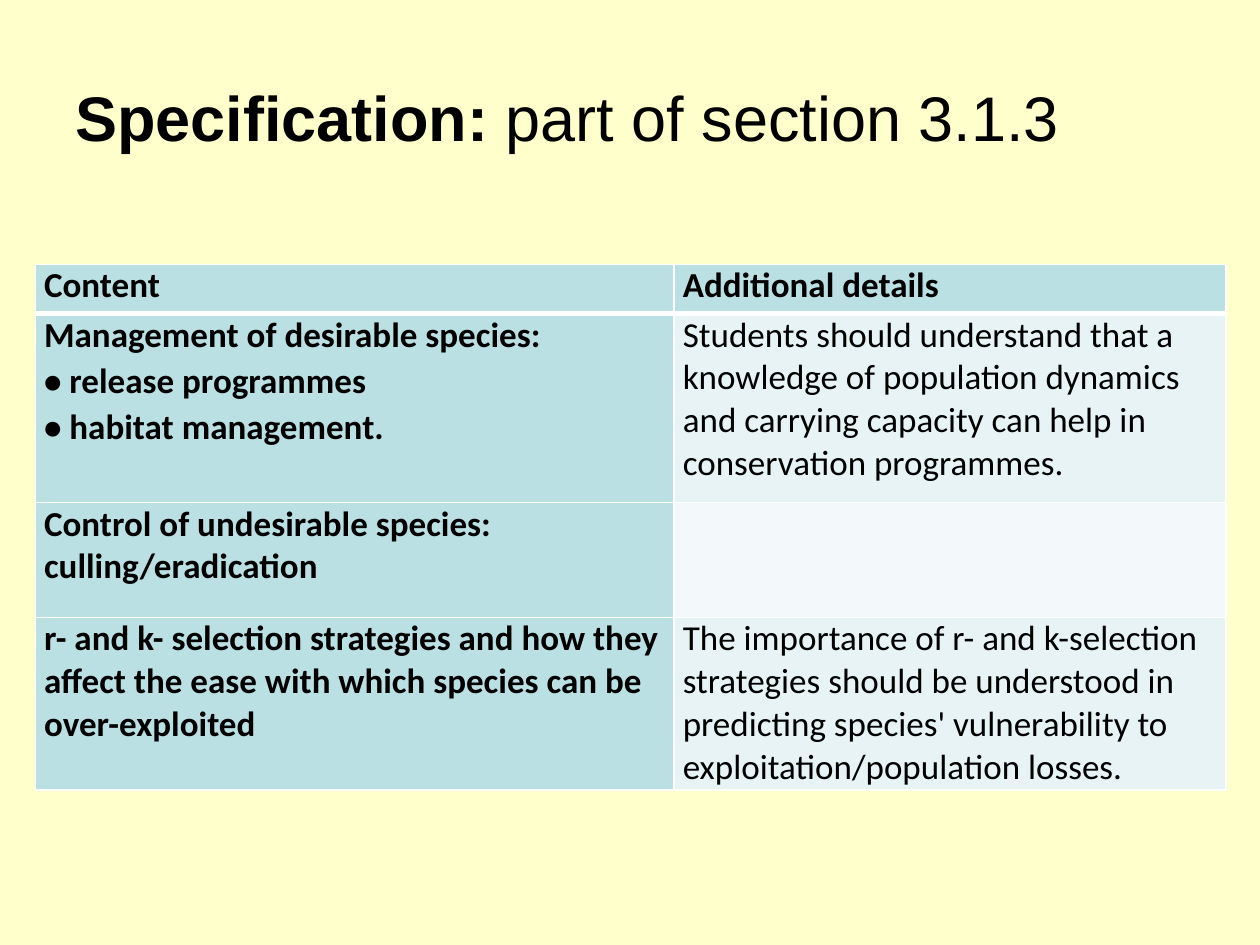
from dataclasses import dataclass

from lxml import etree
from pptx import Presentation
from pptx.dml.color import RGBColor
from pptx.enum.text import MSO_ANCHOR
from pptx.oxml.ns import qn
from pptx.util import Inches, Pt

MIDDLE = MSO_ANCHOR.MIDDLE
BLACK, WHITE, CREAM = "000000", "FFFFFF", "FFFFCC"
TEAL, PALE, PALEST = "BBE0E3", "E7F3F4", "F3F9FA"
COL_WIDTHS = (5.07, 4.38)


@dataclass
class Row:
    height: float
    content: tuple[str, ...]
    details: str
    details_fill: str
    is_header: bool = False


ROWS = [
    Row(0.39, ("Content",), "Additional details", TEAL, True),
    Row(1.5, ("Management of desirable species:", "• release programmes",
              "• habitat management."),
        "Students should understand that a knowledge of population dynamics "
        "and carrying capacity can help in conservation programmes.", PALE),
    Row(0.91, ("Control of undesirable species: culling/eradication",), "", PALEST),
    Row(1.37, ("r- and k- selection strategies and how they affect the ease "
               "with which species can be over-exploited",),
        "The importance of r- and k-selection strategies should be understood in "
        "predicting species' vulnerability to exploitation/population losses.", PALE),
]


def set_fill(fill, color: str) -> None:
    fill.solid()
    fill.fore_color.rgb = RGBColor.from_string(color)


def add_run(p, text: str, font: str, size: float, bold: bool) -> None:
    r = p.add_run()
    r.text = text
    r.font.name, r.font.size, r.font.bold = font, Pt(size), bold
    set_fill(r.font.fill, BLACK)


def add_borders(cell, bottom: float) -> None:
    """Draw white cell borders; call before the fill so the XML order is valid."""
    tc_pr = cell._tc.get_or_add_tcPr()
    for tag, width in (("lnL", 1), ("lnR", 1), ("lnT", 1), ("lnB", bottom)):
        ln = etree.SubElement(tc_pr, qn(f"a:{tag}"), w=str(Pt(width)))
        solid = etree.SubElement(ln, qn("a:solidFill"))
        etree.SubElement(solid, qn("a:srgbClr"), val=WHITE)


def fill_cell(cell, paragraphs: tuple[str, ...], color: str, bold: bool,
              bottom: float) -> None:
    add_borders(cell, bottom)
    set_fill(cell.fill, color)
    cell.margin_left = cell.margin_right = Inches(0.07)
    cell.margin_top = cell.margin_bottom = Inches(0)
    tf = cell.text_frame
    for i, text in enumerate(paragraphs):
        p = tf.add_paragraph() if i else tf.paragraphs[0]
        p.space_before = Pt(2 if i else 0)
        if text:
            add_run(p, text, "Calibri", 20, bold)


def add_title(s) -> None:
    sp = s.shapes.add_textbox(Inches(0.5), Inches(0.3), Inches(9), Inches(1.25))
    tf = sp.text_frame
    tf.word_wrap = True
    tf.vertical_anchor = MIDDLE
    p = tf.paragraphs[0]
    add_run(p, "Specification:", "Arial", 36, True)
    add_run(p, " part of section 3.1.3", "Arial", 36, False)


def add_specification_table(s) -> None:
    height = sum(row.height for row in ROWS)
    table = s.shapes.add_table(len(ROWS), len(COL_WIDTHS), Inches(0.28), Inches(2.1),
                               Inches(sum(COL_WIDTHS)), Inches(height)).table
    for column, width in zip(table.columns, COL_WIDTHS):
        column.width = Inches(width)
    for i, row in enumerate(ROWS):
        table.rows[i].height = Inches(row.height)
        bottom = 3 if row.is_header else 1
        fill_cell(table.cell(i, 0), row.content, TEAL, True, bottom)
        fill_cell(table.cell(i, 1), (row.details,), row.details_fill,
                  row.is_header, bottom)


def main() -> None:
    prs = Presentation()
    prs.slide_width, prs.slide_height = Inches(10), Inches(7.5)
    s = prs.slides.add_slide(prs.slide_layouts[6])
    set_fill(s.background.fill, CREAM)
    add_title(s)
    add_specification_table(s)
    prs.save("out.pptx")


if __name__ == "__main__":
    main()
